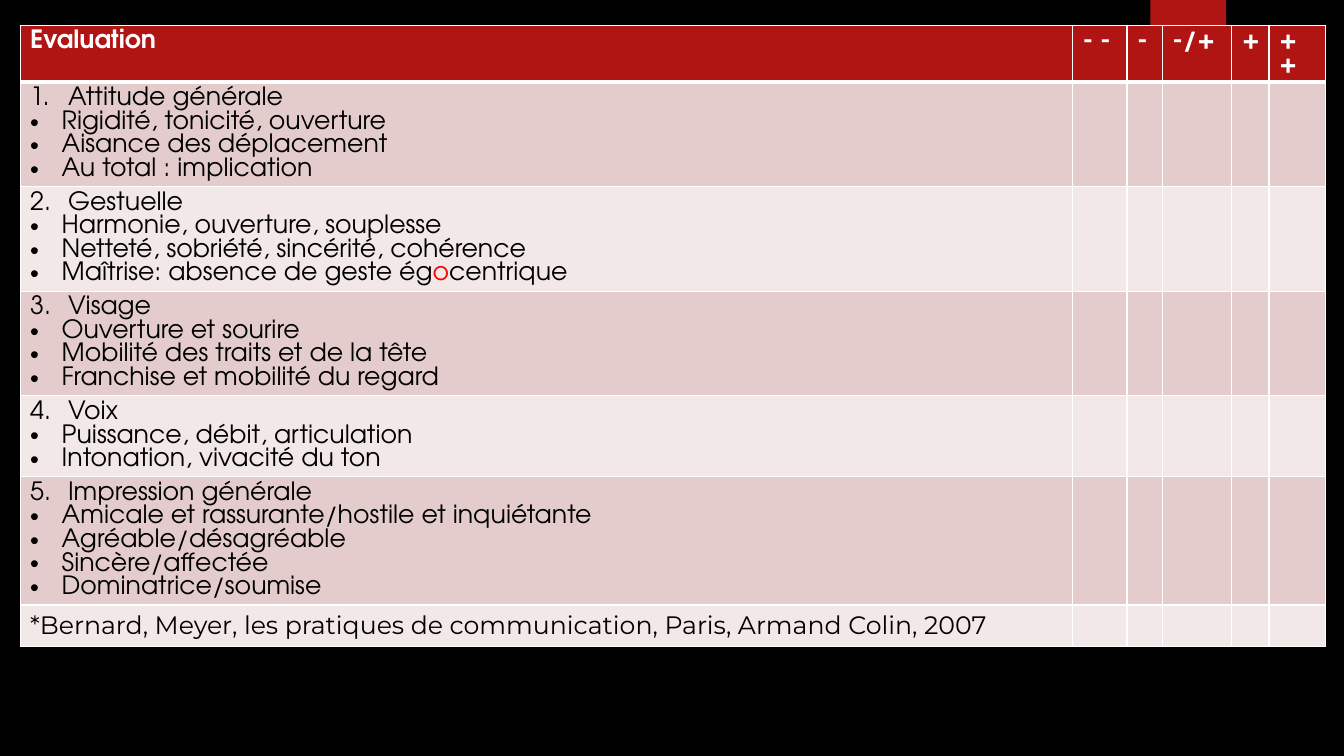
from lxml import etree
from pptx import Presentation
from pptx.dml.color import RGBColor
from pptx.enum.shapes import MSO_SHAPE
from pptx.oxml.ns import qn
from pptx.util import Pt

RECTANGLE = MSO_SHAPE.RECTANGLE
COLORS = {"background": "000000", "red": "B01513", "pink": "E4CCCC", "pale": "F2E8E7",
          "white": "FFFFFF", "black": "000000", "accent": "FF0000"}
HEADING_FONT, NOTE_FONT = "TeX Gyre Adventor", "Montserrat"
LINE_HEIGHT, CELL_PADDING, SINGLE_ROW = 16.88, 7.2, 29.5
COLUMN_WIDTHS = [751.7, 38.9, 25.2, 49.7, 26.6, 40.3]
HEADERS = ["Evaluation", "- -", "-", "-/+", "+", "++"]
NOTE = "*Bernard, Meyer, les pratiques de communication, Paris, Armand Colin, 2007"
# A pipe separates differently coloured runs; the second one is accented
CRITERIA = [
    ("Attitude générale", "Rigidité, tonicité, ouverture", "Aisance des déplacement",
     "Au total : implication"),
    ("Gestuelle", "Harmonie, ouverture, souplesse", "Netteté, sobriété, sincérité, cohérence",
     "Maîtrise: absence de geste ég|o|centrique"),
    ("Visage", "Ouverture et sourire", "Mobilité des traits et de la tête",
     "Franchise et mobilité du regard"),
    ("Voix", "Puissance, débit, articulation", "Intonation, vivacité du ton"),
    ("Impression générale", "Amicale et rassurante/hostile et inquiétante",
     "Agréable/désagréable", "Sincère/affectée", "Dominatrice/soumise"),
]


def write_text(paragraph, text, font=HEADING_FONT, color="black", bold=False, number=0, bullet=False):
    properties = paragraph._p.get_or_add_pPr()
    if number or bullet:
        indent = Pt(27 if number else 22.5)
        properties.set("marL", str(indent))
        properties.set("indent", str(-indent))
    if number:
        etree.SubElement(properties, qn("a:buFont"), typeface="+mj-lt")
        etree.SubElement(properties, qn("a:buAutoNum"), type="arabicPeriod", startAt=str(number))
    elif bullet:
        etree.SubElement(properties, qn("a:buFont"), typeface="Arial")
        etree.SubElement(properties, qn("a:buChar"), char="•")
    for index, part in enumerate(text.split("|")):
        run = paragraph.add_run()
        run.text = part
        run.font.name, run.font.size, run.font.bold = font, Pt(18), bold
        run.font.color.rgb = RGBColor.from_string(COLORS["accent" if index == 1 else color])


def style_cell(cell, fill, bottom_width=1):
    properties = cell._tc.get_or_add_tcPr()
    for side, width in (("L", 1), ("R", 1), ("T", 1), ("B", bottom_width)):
        border = etree.SubElement(properties, qn(f"a:ln{side}"), w=str(Pt(width)))
        border_fill = etree.SubElement(border, qn("a:solidFill"))
        etree.SubElement(border_fill, qn("a:srgbClr"), val=COLORS["white"])
    cell.fill.solid()
    cell.fill.fore_color.rgb = RGBColor.from_string(COLORS[fill])


# Slide and background
presentation = Presentation()
presentation.slide_width, presentation.slide_height = Pt(960), Pt(540)
slide = presentation.slides.add_slide(presentation.slide_layouts[6])
slide.background.fill.solid()
slide.background.fill.fore_color.rgb = RGBColor.from_string(COLORS["background"])

# Red tab at the top
tab = slide.shapes.add_shape(RECTANGLE, Pt(821.8), Pt(0), Pt(54), Pt(90))
tab.shadow.inherit = False
tab.fill.solid()
tab.fill.fore_color.rgb = RGBColor.from_string(COLORS["red"])
tab.line.fill.background()

# Evaluation grid
row_heights = [SINGLE_ROW]
row_heights += [len(lines) * LINE_HEIGHT + CELL_PADDING for lines in CRITERIA]
row_heights += [SINGLE_ROW]
table = slide.shapes.add_table(len(row_heights), len(COLUMN_WIDTHS), Pt(14.4), Pt(18),
                               Pt(sum(COLUMN_WIDTHS)), Pt(sum(row_heights))).table
for column, width in zip(table.columns, COLUMN_WIDTHS):
    column.width = Pt(width)
for row_index, (row, height) in enumerate(zip(table.rows, row_heights)):
    row.height = Pt(height)
    for cell in row.cells:
        if row_index == 0:
            style_cell(cell, "red", bottom_width=3)
        else:
            style_cell(cell, "pink" if row_index % 2 else "pale")

# Header row
for cell, label in zip(table.rows[0].cells, HEADERS):
    write_text(cell.text_frame.paragraphs[0], label, color="white", bold=True)

# Numbered criteria with their bullets
for number, (heading, *points) in enumerate(CRITERIA, start=1):
    text_frame = table.cell(number, 0).text_frame
    write_text(text_frame.paragraphs[0], heading, number=number)
    for point in points:
        write_text(text_frame.add_paragraph(), point, bullet=True)

# Source line
write_text(table.cell(len(row_heights) - 1, 0).text_frame.paragraphs[0], NOTE, font=NOTE_FONT)

presentation.save("out.pptx")
